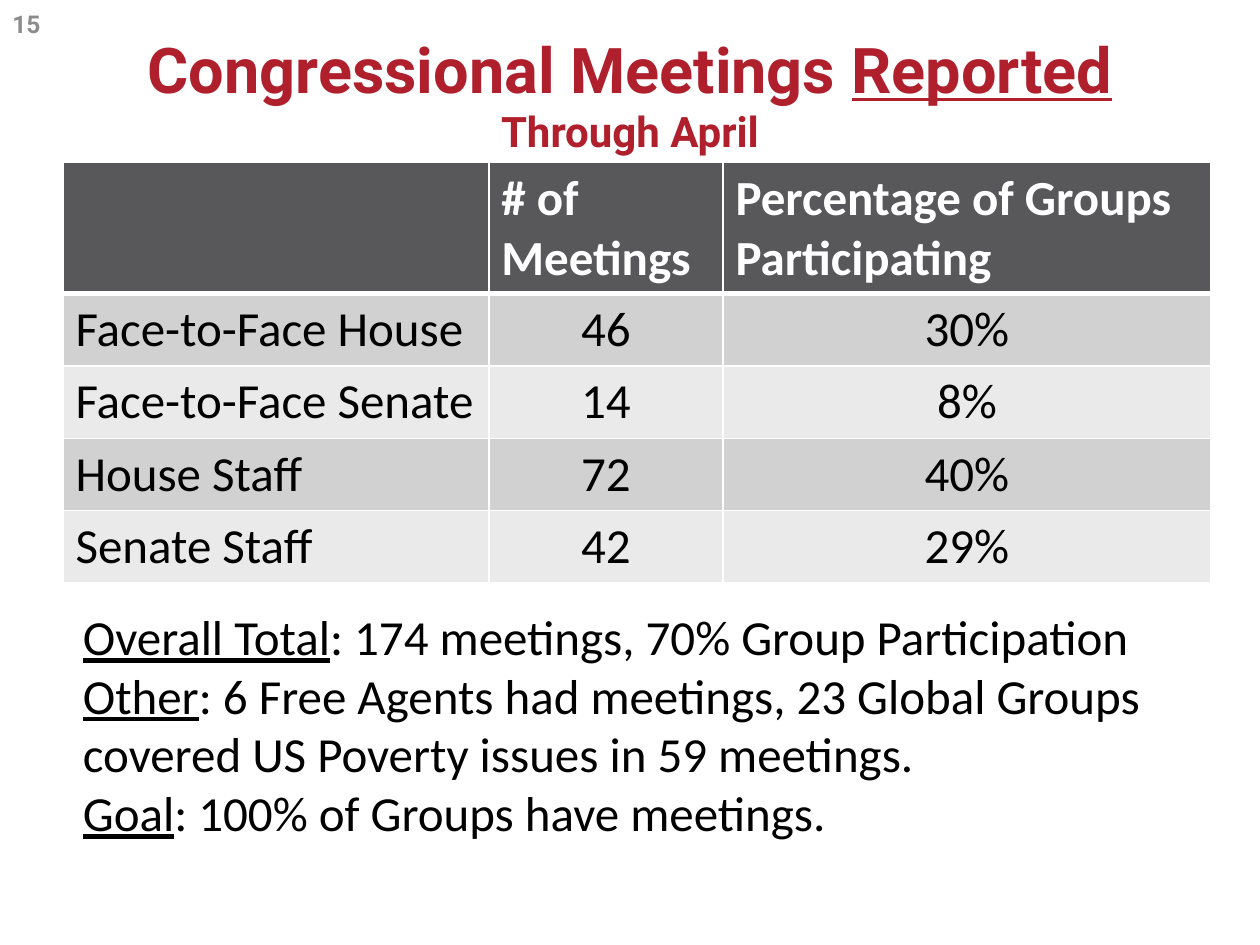
from dataclasses import dataclass
from typing import NamedTuple

from lxml import etree
from pptx import Presentation
from pptx import util as u
from pptx.dml.color import RGBColor
from pptx.enum import text
from pptx.oxml import ns

SLIDE_WIDTH, SLIDE_HEIGHT = u.Inches(10), u.Inches(7.5)


@dataclass(frozen=True)
class Theme:
    heading_font: str = "Roboto"
    body_font: str = "Calibri"
    red: str = "AF1F2C"
    gray: str = "8C8C8C"
    black: str = "000000"
    white: str = "FFFFFF"
    header_fill: str = "58585B"
    band_fills: tuple = ("D1D1D2", "EAEAEA")
    number_size: int = 14
    title_size: int = 36
    subtitle_size: int = 24
    body_size: int = 28
    grid_width: float = 1
    header_rule_width: float = 3


class Area(NamedTuple):
    left: float
    top: float
    width: float
    height: float

    def lengths(self) -> list:
        sides = (SLIDE_WIDTH, SLIDE_HEIGHT) * 2
        return [int(share * side) for share, side in zip(self, sides)]


class Meeting(NamedTuple):
    kind: str
    count: str
    participation: str


class Remark(NamedTuple):
    label: str
    detail: str


THEME = Theme()
NUMBER_AREA = Area(0, 0, 0.05, 0.05)
TITLE_AREA = Area(0.05, 0.033, 0.9, 0.131)
TABLE_AREA = Area(0.05, 0.172, 0.911, 0.445)
REMARKS_AREA = Area(0.056, 0.635, 0.898, 0.265)
COLUMN_SHARES = (0.371, 0.204, 0.425)
ROW_SHARES = (0.312,) + (0.172,) * 4

HEADINGS = Meeting("", "# of Meetings", "Percentage of Groups Participating")
MEETINGS = (
    Meeting("Face-to-Face House", "46", "30%"),
    Meeting("Face-to-Face Senate", "14", "8%"),
    Meeting("House Staff", "72", "40%"),
    Meeting("Senate Staff", "42", "29%"),
)
REMARKS = (
    Remark("Overall Total", ": 174 meetings, 70% Group Participation"),
    Remark("Other", ": 6 Free Agents had meetings, 23 Global Groups "
                    "covered US Poverty issues in 59 meetings."),
    Remark("Goal", ": 100% of Groups have meetings."),
)

NUMBER_FORMAT = dict(name=THEME.heading_font, size=u.Pt(THEME.number_size), bold=True)
TITLE_FORMAT = NUMBER_FORMAT | dict(size=u.Pt(THEME.title_size))
SUBTITLE_FORMAT = NUMBER_FORMAT | dict(size=u.Pt(THEME.subtitle_size))
BODY_FORMAT = dict(name=THEME.body_font, size=u.Pt(THEME.body_size), bold=False)
HEADER_FORMAT = BODY_FORMAT | dict(bold=True)


def add_words(paragraph, words: str, color: str, font_format: dict,
              underline: bool = False) -> None:
    run = paragraph.add_run()
    run.text = words
    for attribute, value in (font_format | dict(underline=underline)).items():
        setattr(run.font, attribute, value)
    run.font.color.rgb = RGBColor.from_string(color)


def add_frame(slide, area: Area, anchor):
    frame = slide.shapes.add_textbox(*area.lengths()).text_frame
    for attribute, value in dict(word_wrap=True, vertical_anchor=anchor).items():
        setattr(frame, attribute, value)
    return frame


def set_borders(cell, bottom_width: float, top_width: float) -> None:
    properties = cell._tc.get_or_add_tcPr()
    widths = dict(lnL=THEME.grid_width, lnR=THEME.grid_width,
                  lnT=top_width, lnB=bottom_width)
    for side, width in widths.items():
        line = etree.SubElement(properties, ns.qn(f"a:{side}"), w=str(u.Pt(width)))
        fill = etree.SubElement(line, ns.qn("a:solidFill"))
        etree.SubElement(fill, ns.qn("a:srgbClr"), val=THEME.white)


def draw_number(slide) -> None:
    paragraph = add_frame(slide, NUMBER_AREA, text.MSO_ANCHOR.MIDDLE).paragraphs[0]
    add_words(paragraph, "15", THEME.gray, NUMBER_FORMAT)


def draw_title(slide) -> None:
    paragraph = add_frame(slide, TITLE_AREA, text.MSO_ANCHOR.MIDDLE).paragraphs[0]
    paragraph.alignment = text.PP_ALIGN.CENTER
    add_words(paragraph, "Congressional Meetings ", THEME.red, TITLE_FORMAT)
    add_words(paragraph, "Reported", THEME.red, TITLE_FORMAT, underline=True)
    paragraph.add_line_break()
    add_words(paragraph, "Through April", THEME.red, SUBTITLE_FORMAT)


def draw_meetings(slide) -> None:
    rows = (HEADINGS,) + MEETINGS
    left, top, width, height = TABLE_AREA.lengths()
    table = slide.shapes.add_table(
        len(rows), len(HEADINGS), left, top, width, height).table
    for column, share in zip(table.columns, COLUMN_SHARES):
        column.width = int(width * share)
    for row, share in zip(table.rows, ROW_SHARES):
        row.height = int(height * share)
    for row_index, meeting in enumerate(rows):
        is_header = row_index == 0
        fill = THEME.header_fill if is_header else THEME.band_fills[(row_index - 1) % 2]
        color = THEME.white if is_header else THEME.black
        for column_index, words in enumerate(meeting):
            cell = table.cell(row_index, column_index)
            set_borders(
                cell,
                THEME.header_rule_width if is_header else THEME.grid_width,
                THEME.header_rule_width if row_index == 1 else THEME.grid_width)
            cell.fill.solid()
            cell.fill.fore_color.rgb = RGBColor.from_string(fill)
            paragraph = cell.text_frame.paragraphs[0]
            if column_index and not is_header:
                paragraph.alignment = text.PP_ALIGN.CENTER
            if words:
                add_words(paragraph, words, color,
                          HEADER_FORMAT if is_header else BODY_FORMAT)


def draw_remarks(slide) -> None:
    frame = add_frame(slide, REMARKS_AREA, text.MSO_ANCHOR.TOP)
    for index, remark in enumerate(REMARKS):
        paragraph = frame.add_paragraph() if index else frame.paragraphs[0]
        add_words(paragraph, remark.label, THEME.black, BODY_FORMAT, underline=True)
        add_words(paragraph, remark.detail, THEME.black, BODY_FORMAT)


def main() -> None:
    deck = Presentation()
    deck.slide_width, deck.slide_height = SLIDE_WIDTH, SLIDE_HEIGHT
    slide = deck.slides.add_slide(deck.slide_layouts[6])
    for draw in (draw_number, draw_title, draw_meetings, draw_remarks):
        draw(slide)
    deck.save("out.pptx")


if __name__ == "__main__":
    main()
